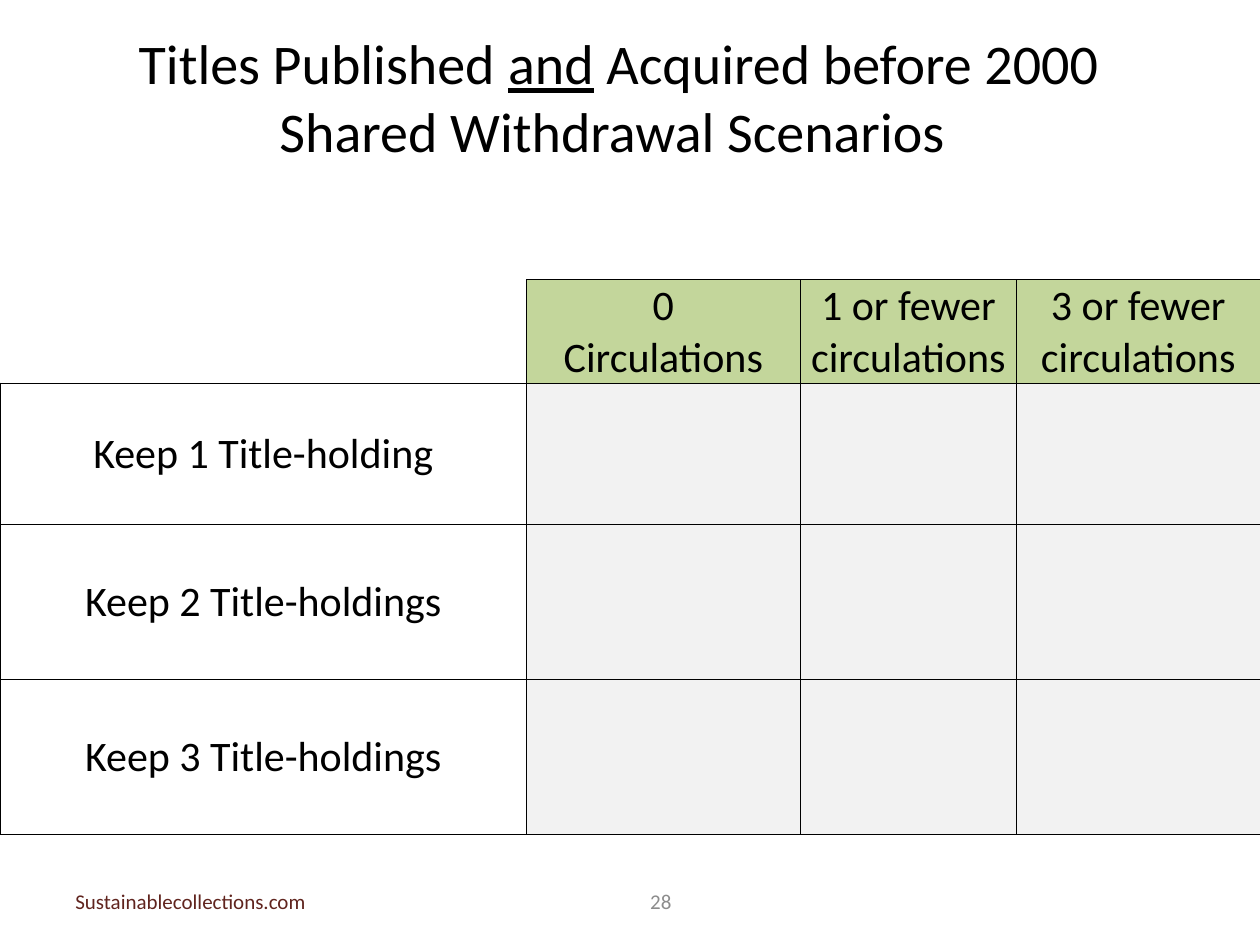
from lxml import etree
from pptx import Presentation
from pptx.dml.color import RGBColor
from pptx.enum.text import MSO_ANCHOR, PP_ALIGN
from pptx.oxml.ns import qn
from pptx.util import Inches, Pt

LEFT, CENTER = PP_ALIGN.LEFT, PP_ALIGN.CENTER
TOP, MIDDLE = MSO_ANCHOR.TOP, MSO_ANCHOR.MIDDLE
BLACK = RGBColor(0x00, 0x00, 0x00)
BROWN = RGBColor(0x60, 0x24, 0x1E)
GRAY = RGBColor(0x8C, 0x8C, 0x8C)
GREEN = RGBColor(0xC3, 0xD6, 0x9B)
PALE = RGBColor(0xF2, 0xF2, 0xF2)
PAGE_WIDTH, PAGE_HEIGHT = 10, 7.5

COLUMNS = [4.18, 2.17, 1.72, 1.93]
ROWS = [0.82, 1.12, 1.23, 1.23]
SCENARIOS = [
    ["", "0\vCirculations", "1 or fewer circulations", "3 or fewer circulations"],
    ["Keep 1 Title-holding", "", "", ""],
    ["Keep 2 Title-holdings", "", "", ""],
    ["Keep 3 Title-holdings", "", "", ""],
]


def set_all(target, values):
    for name, value in values.items():
        setattr(target, name, value)


def style_font(font, size, color):
    set_all(font, {"name": "Calibri", "size": Pt(size)})
    font.color.rgb = color


def add_text(page, box, spans, size, color, align, anchor):
    """Add one paragraph made of (text, underlined) spans."""
    frame = page.shapes.add_textbox(*map(Inches, box)).text_frame
    set_all(frame, {"word_wrap": True, "vertical_anchor": anchor})
    para = frame.paragraphs[0]
    para.alignment = align
    for text, underlined in spans:
        span = para.add_run()
        span.text = text
        style_font(span.font, size, color)
        span.font.underline = underlined


def draw_borders(cell, visible):
    properties = cell._tc.get_or_add_tcPr()
    for side in "LRTB":
        line = etree.SubElement(properties, qn(f"a:ln{side}"), w=str(Pt(0.5)))
        if side in visible:
            fill = etree.SubElement(line, qn("a:solidFill"))
            etree.SubElement(fill, qn("a:srgbClr"), val=str(BLACK))
        else:
            etree.SubElement(line, qn("a:noFill"))


def fill_cell(cell, text, color):
    if color is None:
        cell.fill.background()
    else:
        cell.fill.solid()
        cell.fill.fore_color.rgb = color
    edge = Inches(0.01)
    set_all(cell, {"text": text, "vertical_anchor": MIDDLE, "margin_left": edge,
                   "margin_right": edge, "margin_top": edge, "margin_bottom": 0})
    para = cell.text_frame.paragraphs[0]
    para.alignment = CENTER
    style_font(para.font, 24, BLACK)
    for span in para.runs:
        style_font(span.font, 24, BLACK)


def add_scenarios(page, left, top):
    frame = page.shapes.add_table(
        len(ROWS), len(COLUMNS), Inches(left), Inches(top),
        Inches(sum(COLUMNS)), Inches(sum(ROWS)))
    table = frame.table
    set_all(table, {"first_row": False, "horz_banding": False})
    for column, width in zip(table.columns, COLUMNS):
        column.width = Inches(width)
    for row, height in zip(table.rows, ROWS):
        row.height = Inches(height)
    for r, texts in enumerate(SCENARIOS):
        for c, text in enumerate(texts):
            cell = table.cell(r, c)
            # The corner cell is open at its top and left
            draw_borders(cell, "LRTB" if r or c else "RB")
            color = None if c == 0 else GREEN if r == 0 else PALE
            fill_cell(cell, text, color)


def add_title(page, box):
    spans = [("Titles Published ", False), ("and", True),
             (" Acquired before 2000 Shared Withdrawal Scenarios ", False)]
    add_text(page, box, spans, 32, BLACK, CENTER, TOP)


def add_footer(page, top, height):
    add_text(page, (0.5, top, 3.17, height),
             [("Sustainablecollections.com", False)], 12, BROWN, LEFT, MIDDLE)
    add_text(page, (4.08, top, 2.33, height),
             [("28", False)], 12, GRAY, CENTER, MIDDLE)


def main():
    deck = Presentation()
    set_all(deck, {"slide_width": Inches(PAGE_WIDTH),
                   "slide_height": Inches(PAGE_HEIGHT)})
    page = deck.slides.add_slide(deck.slide_layouts[6])
    add_footer(page, 6.95, 0.4)
    add_scenarios(page, 0, 2.22)
    add_title(page, (0.5, 0.18, 8.82, 1.18))
    deck.save("out.pptx")


if __name__ == "__main__":
    main()
